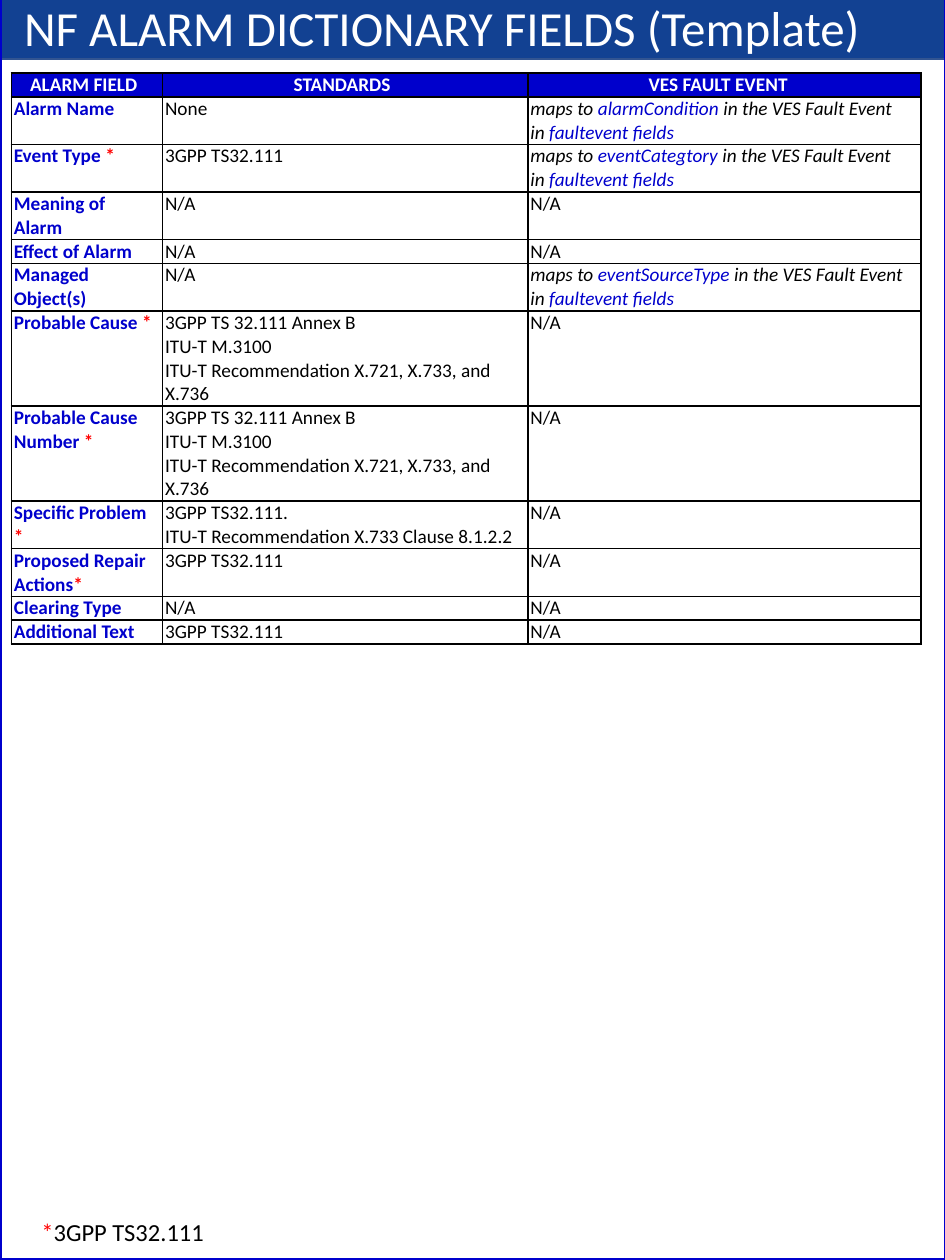
from lxml import etree
from pptx import Presentation
from pptx.dml.color import RGBColor
from pptx.enum.shapes import MSO_SHAPE
from pptx.enum.text import MSO_ANCHOR, PP_ALIGN
from pptx.oxml.ns import qn
from pptx.util import Pt

PX = 9144  # EMU per px, 100 px to the inch
RECT = MSO_SHAPE.RECTANGLE
LEFT, CENTER = PP_ALIGN.LEFT, PP_ALIGN.CENTER
TOP, MIDDLE = MSO_ANCHOR.TOP, MSO_ANCHOR.MIDDLE
FONT = "Calibri"
LINE = 18  # height of one table line
COLS = (120, 290, 312)
PADS = (7, 7, 12)  # right margin of each column
INK = {"bar": "124192", "edge": "325491", "blue": "0000CC",
       "red": "FF0000", "black": "000000", "white": "FFFFFF"}

HEAD = ("ALARM FIELD", "STANDARDS", "VES FAULT EVENT")
SPEC = "3GPP TS32.111"
CAUSE = ("3GPP TS 32.111 Annex B", "ITU-T M.3100",
         "ITU-T Recommendation X.721, X.733, and X.736")
# field, standards, mapped event field, lines of text
ROWS = (
    ("Alarm Name", ("None",), "alarmCondition", 2),
    ("Event Type *", (SPEC,), "eventCategtory", 2),
    ("Meaning of Alarm", ("N/A",), None, 2),
    ("Effect of Alarm", ("N/A",), None, 1),
    ("Managed Object(s)", ("N/A",), "eventSourceType", 2),
    ("Probable Cause *", CAUSE, None, 4),
    ("Probable Cause Number *", CAUSE, None, 4),
    ("Specific Problem *",
     ("3GPP TS32.111.", "ITU-T Recommendation X.733 Clause 8.1.2.2"), None, 2),
    ("Proposed Repair Actions*", (SPEC,), None, 2),
    ("Clearing Type", ("N/A",), None, 1),
    ("Additional Text", (SPEC,), None, 1),
)


def rgb(name):
    return RGBColor.from_string(INK[name])


def scale(*box):
    return [v * PX for v in box]


def write(frame, paras, size, align=LEFT, **style):
    """Fill a frame with paragraphs, each a list of (text, colour) runs."""
    for i, runs in enumerate(paras):
        para = frame.add_paragraph() if i else frame.paragraphs[0]
        para.alignment = align
        for text, ink in runs:
            run = para.add_run()
            run.text = text
            run.font.color.rgb = rgb(ink)
            look = {"name": FONT, "size": Pt(size), **style}
            for key, val in look.items():
                setattr(run.font, key, val)


def set_pads(frame, left, top, right, bottom):
    pads = {"margin_left": left, "margin_top": top,
            "margin_right": right, "margin_bottom": bottom}
    for key, val in pads.items():
        setattr(frame, key, val * PX)


def add_rect(slide, box, fill, line, width):
    rect = slide.shapes.add_shape(RECT, *scale(*box))
    rect.shadow.inherit = False
    if fill:
        rect.fill.solid()
        rect.fill.fore_color.rgb = rgb(fill)
    else:
        rect.fill.background()
    rect.line.color.rgb = rgb(line)
    rect.line.width = Pt(width)
    return rect


def add_title(slide, box):
    x, y, w, h = box
    bar = add_rect(slide, box, "bar", "edge", 1)
    title = slide.shapes.title
    bar.element.addnext(title.element)
    spot = scale(x - 6, y - 2, w - 30, h + 5)
    for key, val in zip(("left", "top", "width", "height"), spot):
        setattr(title, key, val)
    frame = title.text_frame
    frame.word_wrap = False
    frame.vertical_anchor = MIDDLE
    set_pads(frame, 10, 5, 10, 5)
    write(frame, [[("NF ALARM DICTIONARY FIELDS (Template) ", "white")]],
          28, CENTER)


def add_edges(cell):
    props = cell._tc.get_or_add_tcPr()
    for side in ("lnL", "lnR", "lnT", "lnB"):
        line = etree.SubElement(props, qn("a:" + side), w=str(Pt(1)))
        fill = etree.SubElement(line, qn("a:solidFill"))
        etree.SubElement(fill, qn("a:srgbClr"), val=INK["black"])


def field_runs(field):
    text, star, _ = field.partition("*")
    return [(text, "blue")] + ([(star, "red")] if star else [])


def event_runs(name):
    if not name:
        return [("N/A", "black")]
    return [("maps to ", "black"), (name, "blue"),
            (" in the VES Fault Event in ", "black"),
            ("faultevent fields", "blue")]


def add_fields(slide, x, y):
    lines = [1] + [row[-1] for row in ROWS]
    box = scale(x, y, sum(COLS), sum(lines) * LINE)
    table = slide.shapes.add_table(len(lines), len(COLS), *box).table
    for col, wide in zip(table.columns, COLS):
        col.width = wide * PX
    for row, count in zip(table.rows, lines):
        row.height = count * LINE * PX

    # Borders, margins and fills
    for r in range(len(lines)):
        for c, pad in enumerate(PADS):
            cell = table.cell(r, c)
            add_edges(cell)
            set_pads(cell, 2, 0, pad, 0)
            cell.vertical_anchor = TOP
            if r:
                cell.fill.background()
            else:
                cell.fill.solid()
                cell.fill.fore_color.rgb = rgb("blue")

    # Header and body text
    for c, text in enumerate(HEAD):
        write(table.cell(0, c).text_frame, [[(text, "white")]],
              11, CENTER, bold=True)
    for r, (field, norms, event, _) in enumerate(ROWS, 1):
        cells = [table.cell(r, c).text_frame for c in range(3)]
        write(cells[0], [field_runs(field)], 11, bold=True)
        write(cells[1], [[(norm, "black")] for norm in norms], 11, bold=False)
        write(cells[2], [event_runs(event)], 11,
              bold=False, italic=bool(event))


def add_note(slide, box):
    frame = slide.shapes.add_textbox(*scale(*box)).text_frame
    frame.word_wrap = False
    set_pads(frame, 10, 5, 10, 5)
    write(frame, [[("*", "red"), (SPEC, "black")]], 14)


def main():
    deck = Presentation()
    deck.slide_width, deck.slide_height = scale(750, 1000)
    slide = deck.slides.add_slide(deck.slide_layouts[5])
    add_title(slide, (1, -5, 750, 52))
    add_rect(slide, (0, -5, 751, 1005), None, "blue", 2.25)
    add_fields(slide, 9, 58)
    add_note(slide, (23, 961, 151, 34))
    deck.save("out.pptx")


if __name__ == "__main__":
    main()
